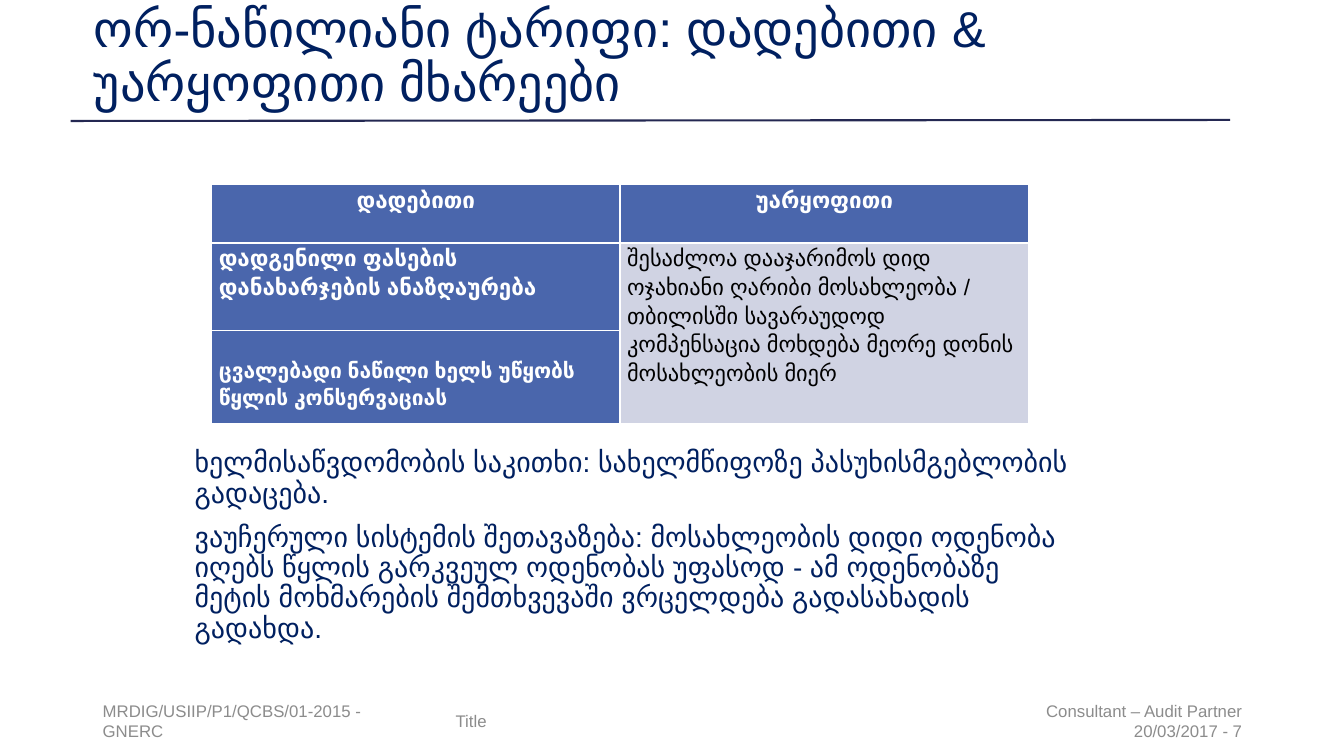
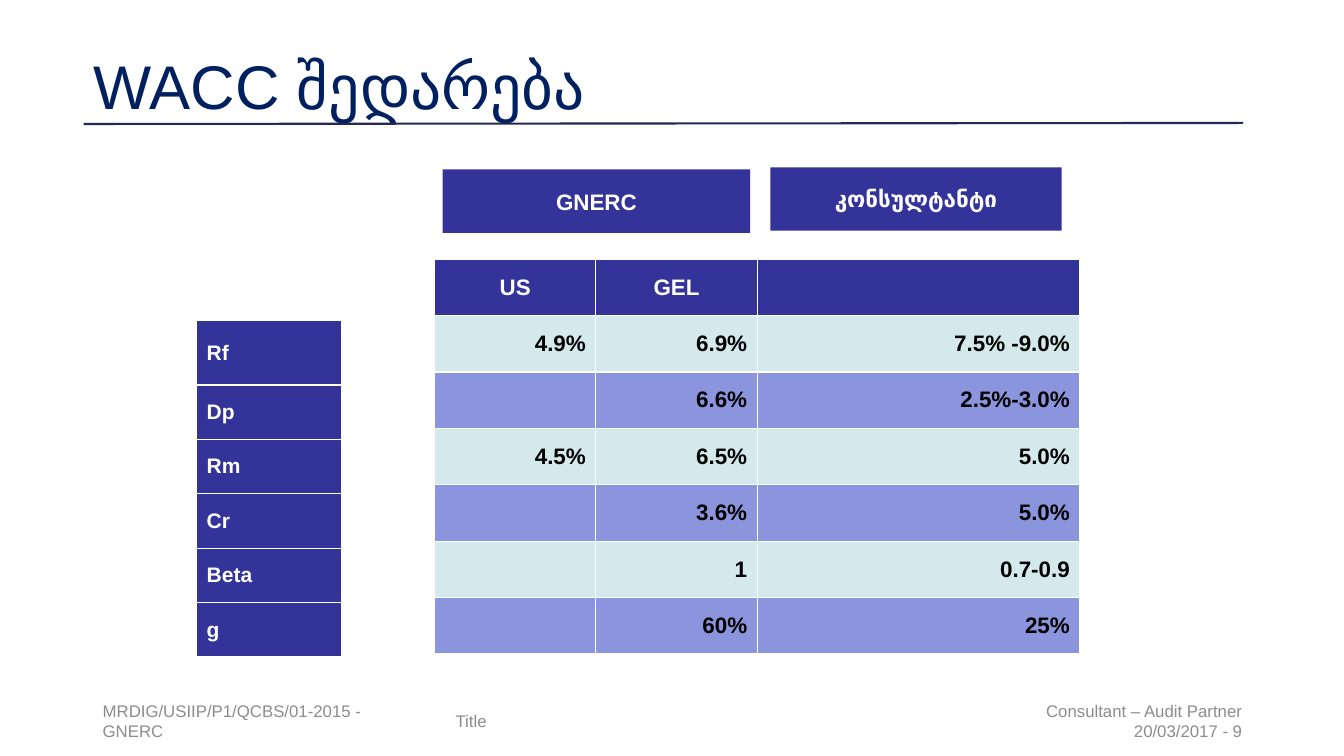
from lxml.etree import SubElement
from pptx import Presentation
from pptx.dml.color import RGBColor
from pptx.enum.shapes import MSO_CONNECTOR, MSO_SHAPE
from pptx.enum.text import MSO_ANCHOR, MSO_AUTO_SIZE, PP_ALIGN
from pptx.oxml.ns import qn
from pptx.util import Inches, Pt

FONT = "Arial"
NAVY, RULE, GREY = "002060", "242852", "8C8C8C"
WHITE, BLACK = "FFFFFF", "000000"
BLUE, PALE = "4A66AC", "D0D3E3"
INDIGO, ICE, LAVENDER = "333399", "D4E9EC", "8B95DD"
LEFT, CENTER, RIGHT = PP_ALIGN.LEFT, PP_ALIGN.CENTER, PP_ALIGN.RIGHT

# Shared footer: left, width, alignment, lines
FOOTERS = [
    (0.92, 3.41, LEFT, ["MRDIG/USIIP/P1/QCBS/01-2015 - GNERC"]),
    (4.42, 4.5, LEFT, ["Title"]),
    (9.16, 3.26, RIGHT, ["Consultant – Audit Partner", "20/03/2017 - {page}"]),
]

# Two-part tariff
TARIFF_TITLE = "ორ-ნაწილიანი ტარიფი: დადებითი & უარყოფითი მხარეები"
TARIFF_HEADINGS = ["დადებითი", "უარყოფითი"]
ADVANTAGES = [
    "დადგენილი ფასების დანახარჯების ანაზღაურება",
    "ცვალებადი ნაწილი ხელს უწყობს წყლის კონსერვაციას",
]
DRAWBACK = ("შესაძლოა დააჯარიმოს დიდ ოჯახიანი ღარიბი მოსახლეობა / თბილისში "
            "სავარაუდოდ კომპენსაცია მოხდება მეორე დონის მოსახლეობის მიერ")
REMARKS = [
    "ხელმისაწვდომობის საკითხი: სახელმწიფოზე პასუხისმგებლობის გადაცება.",
    "ვაუჩერული სისტემის შეთავაზება: მოსახლეობის დიდი ოდენობა იღებს წყლის "
    "გარკვეულ ოდენობას უფასოდ - ამ ოდენობაზე მეტის მოხმარების შემთხვევაში "
    "ვრცელდება გადასახადის გადახდა.",
]

# WACC comparison
WACC_TITLE = "WACC შედარება"
SOURCES = [("GNERC", 4.39, 1.68, 3.05), ("კონსულტანტი", 7.64, 1.66, 2.89)]
PARAMETERS = ["Rf", "Dp", "Rm", "Cr", "Beta", "g"]
RATES = [
    ("US", "GEL", ""),
    ("4.9%", "6.9%", "7.5% -9.0%"),
    ("", "6.6%", "2.5%-3.0%"),
    ("4.5%", "6.5%", "5.0%"),
    ("", "3.6%", "5.0%"),
    ("", "1", "0.7-0.9"),
    ("", "60%", "25%"),
]


def rgb(value):
    return RGBColor.from_string(value)


def write(frame, lines, size, color, align=LEFT, bold=False, spacing=None, before=0):
    frame.text = "\n".join(lines)
    frame.word_wrap = True
    for paragraph in frame.paragraphs:
        paragraph.alignment = align
        paragraph.space_before = Pt(before)
        if spacing:
            paragraph.line_spacing = spacing
        for run in paragraph.runs:
            font = run.font
            font.name, font.size, font.bold = FONT, Pt(size), bold
            font.color.rgb = rgb(color)


def add_text(slide, left, top, width, height, lines, size, color, **style):
    box = slide.shapes.add_textbox(*map(Inches, (left, top, width, height)))
    frame = box.text_frame
    write(frame, lines, size, color, **style)
    frame.vertical_anchor = MSO_ANCHOR.MIDDLE
    return frame


def add_slide(deck, heading, size, space_below, rule_left, rule_top, page):
    slide = deck.slides.add_slide(deck.slide_layouts[5])
    # Title sits just above the rule
    title = slide.shapes.title
    title.left, title.top = Inches(0.83), Inches(0)
    title.width, title.height = Inches(11.5), Inches(1.45)
    frame = title.text_frame
    write(frame, [heading], size, NAVY, spacing=0.9)
    frame.auto_size = MSO_AUTO_SIZE.NONE
    frame.vertical_anchor = MSO_ANCHOR.BOTTOM
    frame.margin_bottom = Inches(space_below)
    # Footer
    for left, width, align, lines in FOOTERS:
        add_text(slide, left, 6.95, width, 0.4,
                 [line.format(page=page) for line in lines], 12, GREY, align=align)
    # Rule
    rule = slide.shapes.add_connector(
        MSO_CONNECTOR.STRAIGHT, Inches(rule_left), Inches(rule_top),
        Inches(rule_left + 11.5), Inches(rule_top - 0.01))
    rule.line.color.rgb = rgb(RULE)
    rule.line.width = Pt(1.5)
    SubElement(rule.element.spPr, qn("a:effectLst"))
    return slide


def add_grid(slide, left, top, widths, heights, header=False):
    table = slide.shapes.add_table(
        len(heights), len(widths), Inches(left), Inches(top),
        Inches(sum(widths)), Inches(sum(heights))).table
    table.first_row, table.horz_banding = header, False
    for column, width in zip(table.columns, widths):
        column.width = Inches(width)
    for row, height in zip(table.rows, heights):
        row.height = Inches(height)
    return table


def fill_cell(cell, text, fill, size, color=WHITE, align=LEFT, bold=True,
              anchor=MSO_ANCHOR.MIDDLE, spacing=None):
    cell.fill.solid()
    cell.fill.fore_color.rgb = rgb(fill)
    cell.vertical_anchor = anchor
    if text:
        write(cell.text_frame, [text], size, color, align, bold, spacing)


def build_tariff(deck):
    slide = add_slide(deck, TARIFF_TITLE, 36, 0.33, 0.7, 1.2, page=7)
    remarks = add_text(slide, 1.74, 4.52, 9.04, 1.8, REMARKS, 20, NAVY,
                       spacing=0.9, before=10)
    remarks.margin_left = remarks.margin_right = Inches(0.19)

    # Advantages beside one merged drawback
    table = add_grid(slide, 2.1, 1.83, [4.05] * 2, [0.58, 0.87, 0.92], header=True)
    table.cell(1, 1).merge(table.cell(2, 1))
    for cell in table.iter_cells():
        cell.margin_left = cell.margin_right = Inches(0.07)
        cell.margin_top = cell.margin_bottom = 0
    body = {"anchor": MSO_ANCHOR.TOP, "spacing": 1.15}
    for column, heading in enumerate(TARIFF_HEADINGS):
        fill_cell(table.cell(0, column), heading, BLUE, 16, align=CENTER, **body)
    for row, (advantage, size) in enumerate(zip(ADVANTAGES, (16, 15)), 1):
        fill_cell(table.cell(row, 0), advantage, BLUE, size, **body)
    table.cell(2, 0).margin_top = Inches(0.25)
    fill_cell(table.cell(1, 1), DRAWBACK, PALE, 16, BLACK, bold=False, **body)


def build_wacc(deck):
    slide = add_slide(deck, WACC_TITLE, 44, 0.23, 0.83, 1.23, page=9)

    # Parameter names
    names = add_grid(slide, 1.95, 3.18, [1.44], [0.64] + [0.54] * 5)
    for row, parameter in enumerate(PARAMETERS):
        fill_cell(names.cell(row, 0), parameter, INDIGO, 15)

    # Rates, in alternating bands under the heading row
    rates = add_grid(slide, 4.31, 2.57, [1.6, 1.6, 3.2], [0.56] * len(RATES))
    for row, values in enumerate(RATES):
        for column, value in enumerate(values):
            cell = rates.cell(row, column)
            if row == 0:
                fill_cell(cell, value, INDIGO, 16, align=CENTER)
            else:
                band = ICE if row % 2 else LAVENDER
                fill_cell(cell, value, band, 16, BLACK, RIGHT)

    # Source labels above the rates
    for source, left, top, width in SOURCES:
        label = slide.shapes.add_shape(
            MSO_SHAPE.RECTANGLE, *map(Inches, (left, top, width, 0.63)))
        label.shadow.inherit = False
        label.fill.solid()
        label.fill.fore_color.rgb = rgb(INDIGO)
        label.line.fill.background()
        write(label.text_frame, [source], 16, WHITE, CENTER, True)
        label.text_frame.vertical_anchor = MSO_ANCHOR.MIDDLE


def main():
    deck = Presentation()
    deck.slide_width, deck.slide_height = Inches(13.33), Inches(7.5)
    build_tariff(deck)
    build_wacc(deck)
    deck.save("out.pptx")


if __name__ == "__main__":
    main()
